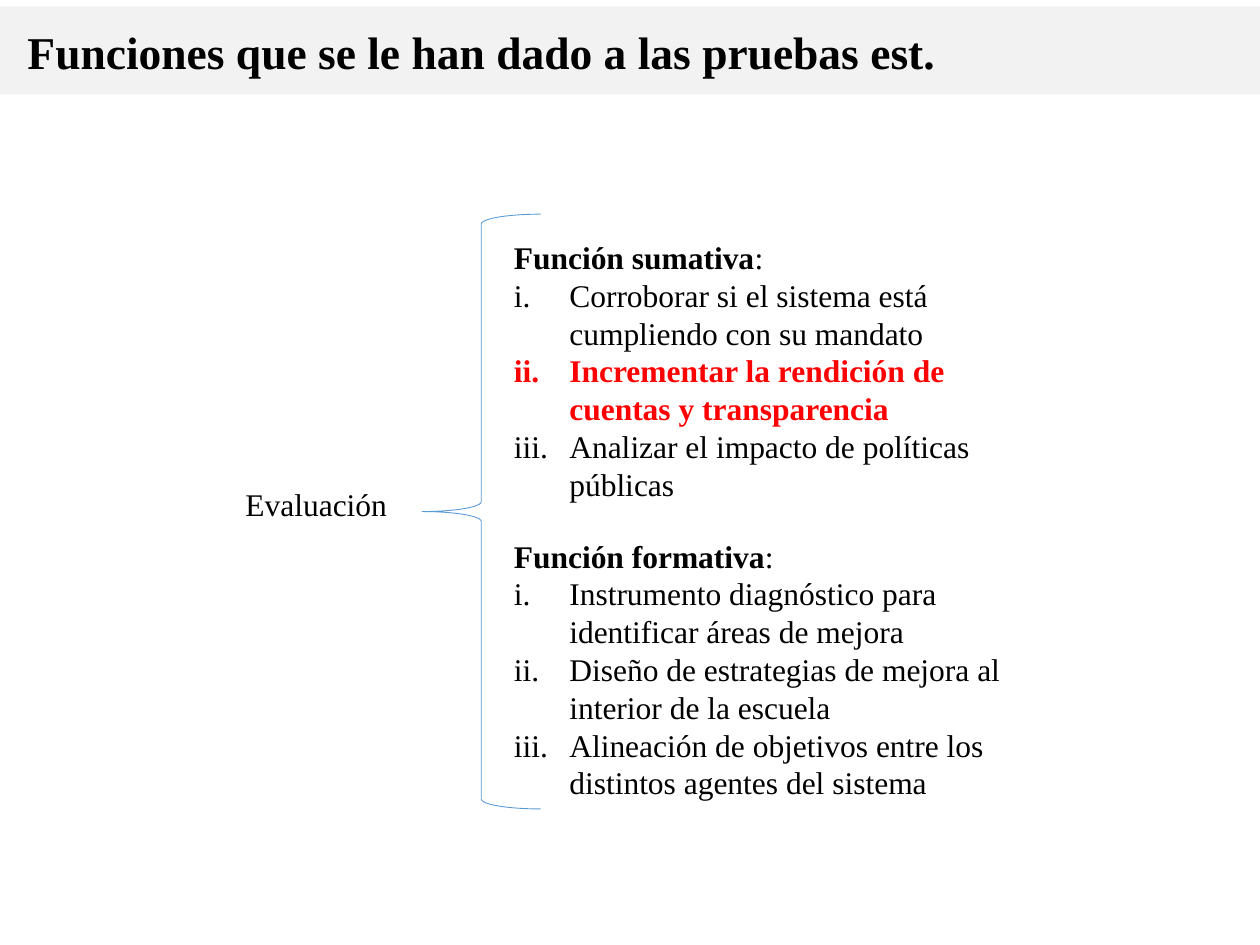
from typing import NamedTuple

from lxml.etree import SubElement
from pptx import Presentation
from pptx.dml.color import RGBColor
from pptx.enum.shapes import MSO_SHAPE as Preset
from pptx.enum.text import MSO_AUTO_SIZE as AutoSize
from pptx.oxml.ns import qn
from pptx.util import Inches, Pt

BLACK = RGBColor(0x00, 0x00, 0x00)
RED = RGBColor(0xFF, 0x00, 0x00)
BAND_GRAY = RGBColor(0xF2, 0xF2, 0xF2)
BRACE_BLUE = RGBColor(0x5B, 0x9B, 0xD5)
FONT = "Times New Roman"
BODY_SIZE = 18
LIST_INDENT = Inches(0.44)


class Box(NamedTuple):
    left: float
    top: float
    width: float
    height: float

    def lengths(self) -> list:
        return [Inches(value) for value in self]


class Item(NamedTuple):
    text: str
    highlighted: bool = False


class Function(NamedTuple):
    name: str
    top: float
    items: list[Item]


FUNCTIONS = [
    Function("Función sumativa", 1.84, [
        Item("Corroborar si el sistema está cumpliendo con su mandato"),
        Item("Incrementar la rendición de cuentas y transparencia", True),
        Item("Analizar el impacto de políticas públicas"),
    ]),
    Function("Función formativa", 4.21, [
        Item("Instrumento diagnóstico para identificar áreas de mejora"),
        Item("Diseño de estrategias de mejora al interior de la escuela"),
        Item("Alineación de objetivos entre los distintos agentes del sistema"),
    ]),
]


def add_run(paragraph, text: str, size: float = BODY_SIZE, bold: bool = False,
            color: RGBColor = BLACK) -> None:
    run = paragraph.add_run()
    run.text = text
    run.font.name = FONT
    run.font.size = Pt(size)
    run.font.bold = bold
    run.font.color.rgb = color


def add_text_frame(slide, box: Box):
    text_frame = slide.shapes.add_textbox(*box.lengths()).text_frame
    text_frame.word_wrap = True
    text_frame.auto_size = AutoSize.SHAPE_TO_FIT_TEXT
    return text_frame


def add_preset(slide, preset: Preset, box: Box):
    shape = slide.shapes.add_shape(preset, *box.lengths())
    shape.shadow.inherit = False
    return shape


def number_paragraph(paragraph) -> None:
    """Give the paragraph a lowercase roman number and a hanging indent."""
    properties = paragraph._p.get_or_add_pPr()
    properties.set("marL", str(LIST_INDENT))
    properties.set("indent", str(-LIST_INDENT))
    SubElement(properties, qn("a:buFont"), typeface="+mj-lt")
    SubElement(properties, qn("a:buAutoNum"), type="romanLcPeriod")


def add_function(slide, function: Function) -> None:
    text_frame = add_text_frame(slide, Box(3.98, function.top, 4.09, 2.22))
    heading = text_frame.paragraphs[0]
    add_run(heading, function.name, bold=True)
    add_run(heading, ":")
    for item in function.items:
        paragraph = text_frame.add_paragraph()
        number_paragraph(paragraph)
        add_run(paragraph, item.text, bold=item.highlighted,
                color=RED if item.highlighted else BLACK)


def main() -> None:
    presentation = Presentation()
    presentation.slide_width = Inches(10)
    presentation.slide_height = Inches(7.5)
    slide = presentation.slides.add_slide(presentation.slide_layouts[6])

    band = add_preset(slide, Preset.RECTANGLE, Box(0, 0.05, 10, 0.7))
    band.fill.solid()
    band.fill.fore_color.rgb = BAND_GRAY
    band.line.fill.background()

    title = add_text_frame(slide, Box(0.12, 0.14, 8.27, 0.54))
    add_run(title.paragraphs[0], "Funciones que se le han dado a las pruebas est.",
            size=26, bold=True)

    topic = add_text_frame(slide, Box(1.85, 3.8, 1.5, 0.4))
    add_run(topic.paragraphs[0], "Evaluación")

    brace = add_preset(slide, Preset.LEFT_BRACE, Box(3.35, 1.7, 0.94, 4.72))
    brace.fill.background()
    brace.line.color.rgb = BRACE_BLUE
    brace.line.width = Pt(0.5)

    for function in FUNCTIONS:
        add_function(slide, function)

    presentation.save("out.pptx")


if __name__ == "__main__":
    main()
